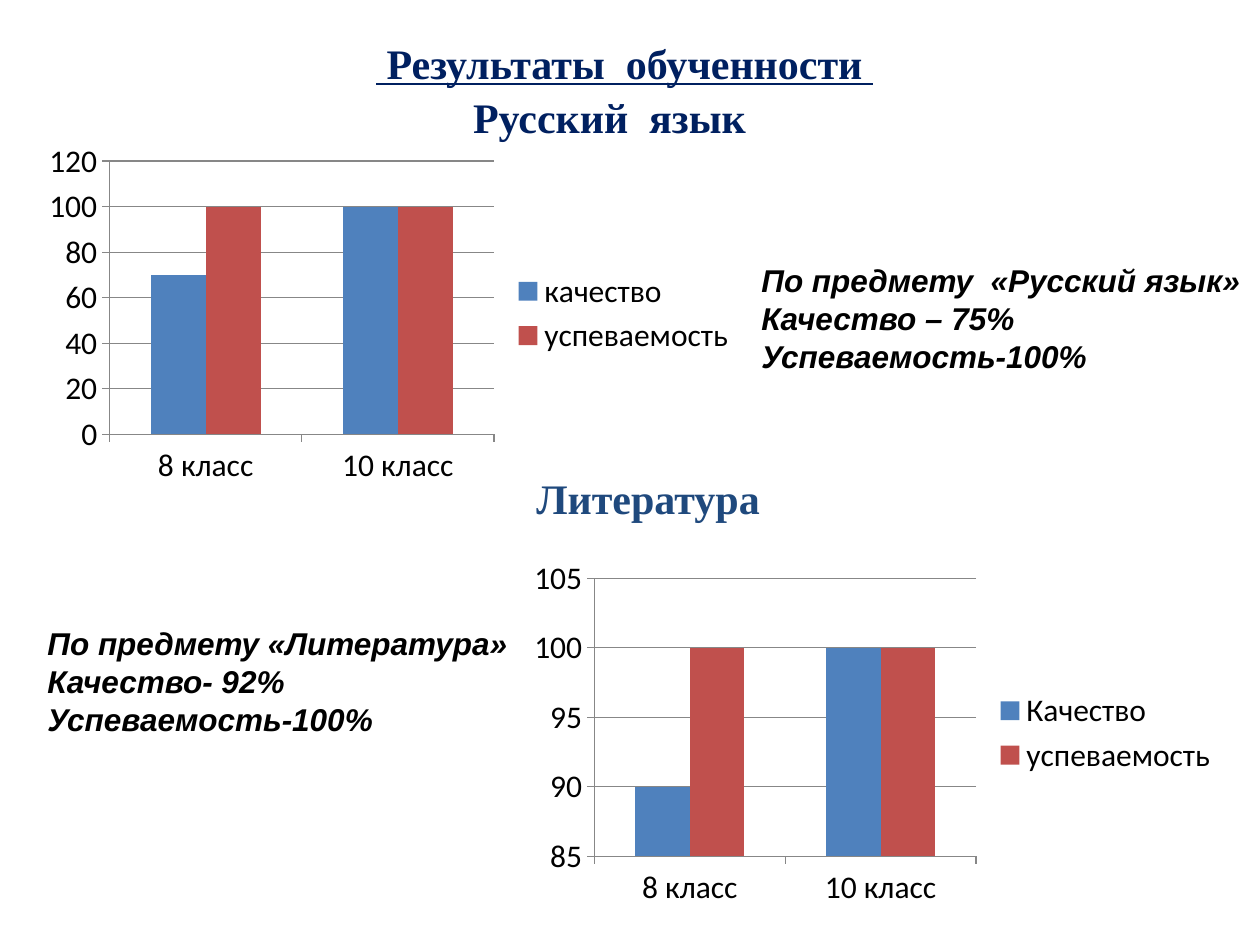
from dataclasses import dataclass

from pptx import Presentation, util as u
from pptx.chart.data import CategoryChartData
from pptx.dml.color import RGBColor
from pptx.enum import chart as ch, text

PX = u.Inches(1) / 126


@dataclass(frozen=True)
class Theme:
    navy: str = "002060"
    blue: str = "1F497D"
    black: str = "000000"
    grid: str = "878787"
    series: tuple = ("4F81BD", "C0504D")
    serif: str = "Times New Roman"
    sans: str = "Arial"
    chart: str = "Calibri"
    heading: int = 24
    body: int = 18


T = Theme()


def px(n):
    return u.Emu(round(n * PX))


def style(font, color, **values):
    for name, value in values.items():
        setattr(font, name, value)
    font.color.rgb = RGBColor.from_string(color)


def add_text(s, box, lines, color, anchor=text.MSO_ANCHOR.TOP, **values):
    sp = s.shapes.add_textbox(*map(px, box))
    tf = sp.text_frame
    tf.word_wrap = True
    tf.vertical_anchor = anchor
    for i, line in enumerate(lines):
        p = tf.paragraphs[0] if i == 0 else tf.add_paragraph()
        r = p.add_run()
        r.text = line
        style(r.font, color, **values)
    return tf.paragraphs


def add_title(s, box):
    lines = (" Результаты  обученности ", "Русский  язык")
    first, second = add_text(s, box, lines, T.navy, text.MSO_ANCHOR.MIDDLE,
                             name=T.serif, size=u.Pt(T.heading), bold=True)
    for p in (first, second):
        p.alignment = text.PP_ALIGN.CENTER
    first.runs[0].font.underline = True
    second.space_before = u.Pt(2)
    second._p.get_or_add_pPr().set("marR", str(px(30)))


def add_subtitle(s, box):
    add_text(s, box, ["Литература"], T.blue,
             name=T.serif, size=u.Pt(T.heading), bold=True)


def add_summary(s, box, lines):
    add_text(s, box, lines, T.black,
             name=T.sans, size=u.Pt(T.body), bold=True, italic=True)


def add_results_chart(s, box, series, scale):
    data = CategoryChartData()
    data.categories = ["8 класс", "10 класс"]
    for name, values in series:
        data.add_series(name, values)
    chart = s.shapes.add_chart(ch.XL_CHART_TYPE.COLUMN_CLUSTERED,
                               *map(px, box), data).chart
    style(chart.font, T.black, name=T.chart, size=u.Pt(T.body))
    chart.has_title = False
    chart.has_legend = True
    chart.legend.position = ch.XL_LEGEND_POSITION.RIGHT
    chart.legend.include_in_layout = False
    plot = chart.plots[0]
    plot.vary_by_categories = False
    plot.gap_width = 150
    for bars, color in zip(plot.series, T.series):
        bars.format.fill.solid()
        bars.format.fill.fore_color.rgb = RGBColor.from_string(color)
    axis = chart.value_axis
    for name, value in zip(("minimum_scale", "maximum_scale", "major_unit"), scale):
        setattr(axis, name, value)
    axis.has_major_gridlines = True
    for part in (axis, axis.major_gridlines, chart.category_axis):
        part.format.line.color.rgb = RGBColor.from_string(T.grid)
        part.format.line.width = u.Pt(0.75)
    for part in (axis, chart.category_axis):
        part.major_tick_mark = ch.XL_TICK_MARK.OUTSIDE


def main():
    prs = Presentation()
    prs.slide_width, prs.slide_height = px(1260), px(945)
    s = prs.slides.add_slide(prs.slide_layouts[6])
    add_title(s, (74, 0, 1101, 179))
    add_results_chart(s, (35, 135, 714, 357),
                      [("качество", (70, 100)), ("успеваемость", (100, 100))],
                      (0, 120, 20))
    add_summary(s, (749, 255, 511, 127),
                ["По предмету  «Русский язык»", "Качество – 75%", "Успеваемость-100%"])
    add_subtitle(s, (524, 466, 553, 63))
    add_results_chart(s, (520, 552, 711, 362),
                      [("Качество", (90, 100)), ("успеваемость", (100, 100))],
                      (85, 105, 5))
    add_summary(s, (35, 618, 486, 127),
                ["По предмету «Литература»", "Качество- 92%", "Успеваемость-100%"])
    prs.save("out.pptx")


if __name__ == "__main__":
    main()
